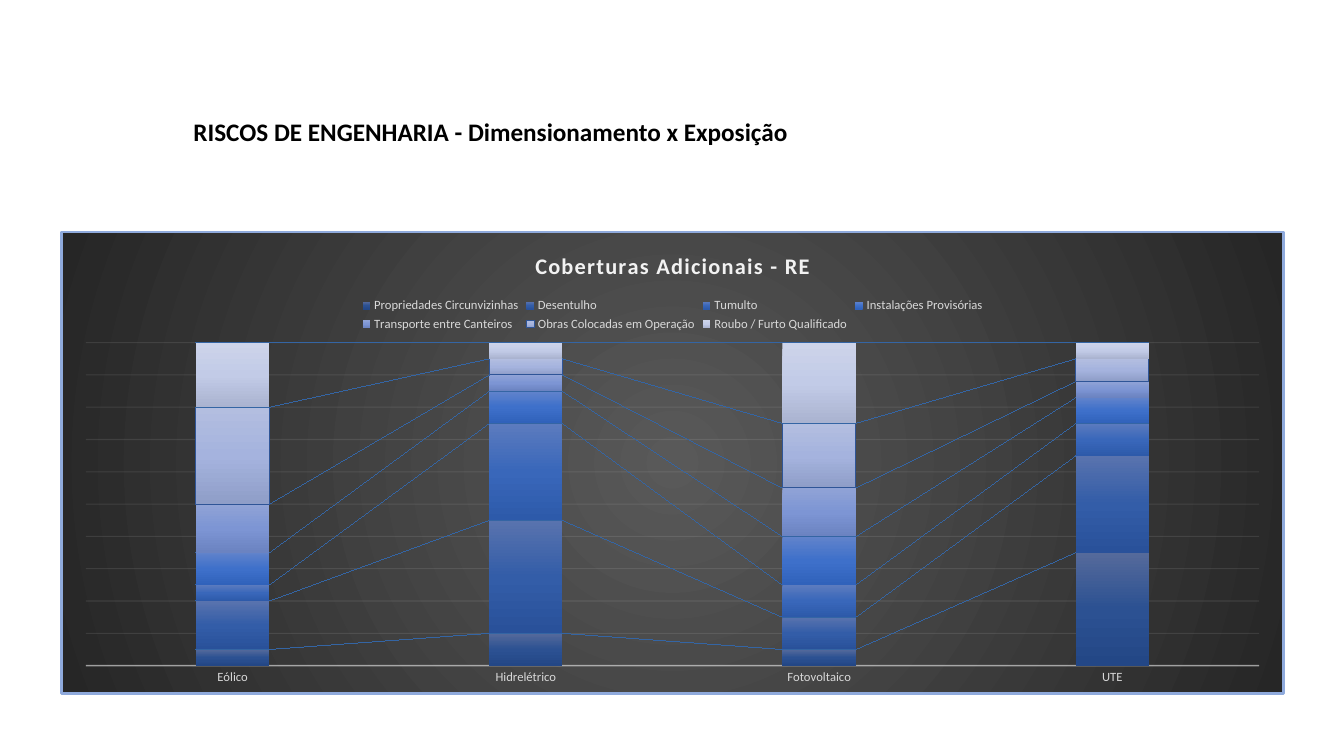
import pptx
import pptx.chart.data
import pptx.dml.color
import pptx.enum.chart
import pptx.oxml
import pptx.oxml.ns
import pptx.util
from dataclasses import dataclass
from pptx.util import Inches

NS = pptx.oxml.ns.nsdecls("a", "c")
qn = pptx.oxml.ns.qn


@dataclass(frozen=True)
class Theme:
    font: str = "Calibri"
    heading: str = "000000"
    chart_title: str = "F2F2F2"
    label: str = "D9D9D9"
    rule: str = "F2F2F2"
    border: str = "8FAADC"
    outline: str = "2F5597"
    link: str = "2E68B0"
    backdrop: tuple = ("595959", "262626")
    heading_size: float = 18
    title_size: float = 16
    label_size: float = 9


CATEGORIES = ["Eólico", "Hidrelétrico", "Fotovoltaico", "UTE"]
# name, values, gradient from top to bottom
COVERAGES = [
    ("Propriedades Circunvizinhas", (5, 10, 5, 35), ("556A9B", "2C5192", "234786")),
    ("Desentulho", (15, 35, 10, 30), ("5973AE", "335DA8", "29519A")),
    ("Tumulto", (5, 30, 10, 10), ("5C7BBE", "3967BA", "2D5AAA")),
    ("Instalações Provisórias", (10, 10, 15, 8), ("6183CB", "3E70CA", "3062BB")),
    ("Transporte entre Canteiros", (15, 5, 15, 5), ("90A3D6", "7D95D4", "6B83C1")),
    ("Obras Colocadas em Operação", (30, 5, 20, 7), ("B3BEE0", "A5B3DE", "8F9EC8")),
    ("Roubo / Furto Qualificado", (20, 5, 25, 5), ("CDD4EA", "C2CBE7", "AAB3D0")),
]
OUTLINED = "Obras Colocadas em Operação"


def gradient_xml(colors, direction):
    last = len(colors) - 1
    stops = "".join(
        f'<a:gs pos="{100000 * i // last}"><a:srgbClr val="{color}"/></a:gs>'
        for i, color in enumerate(colors))
    return f'<a:gradFill {NS} rotWithShape="1"><a:gsLst>{stops}</a:gsLst>{direction}</a:gradFill>'


def line_xml(color, width):
    return (f'<a:ln {NS} w="{pptx.util.Pt(width)}"><a:solidFill>'
            f'<a:srgbClr val="{color}"/></a:solidFill></a:ln>')


class SlideBuilder:
    def __init__(self, slide, theme):
        self.slide = slide
        self.theme = theme

    def style_font(self, font, size, color, bold=False):
        font.name = self.theme.font
        font.size = pptx.util.Pt(size)
        font.bold = bold
        font.color.rgb = pptx.dml.color.RGBColor.from_string(color)

    def style_line(self, line, color, width, opacity=100):
        line.width = pptx.util.Pt(width)
        line.color.rgb = pptx.dml.color.RGBColor.from_string(color)
        if opacity < 100:
            for rgb in line._ln.iter(qn("a:srgbClr")):
                rgb.append(pptx.oxml.parse_xml(f'<a:alpha {NS} val="{opacity * 1000}"/>'))

    def heading(self, text, left, top, width, height):
        frame = self.slide.shapes.add_textbox(left, top, width, height).text_frame
        frame.word_wrap = True
        paragraph = frame.paragraphs[0]
        paragraph.space_after = pptx.util.Pt(6)
        run = paragraph.add_run()
        run.text = text
        self.style_font(run.font, self.theme.heading_size, self.theme.heading, True)

    def coverage_chart(self, title, left, top, width, height):
        data = pptx.chart.data.CategoryChartData()
        data.categories = CATEGORIES
        for name, values, _ in COVERAGES:
            data.add_series(name, values)
        chart = self.slide.shapes.add_chart(
            pptx.enum.chart.XL_CHART_TYPE.COLUMN_STACKED_100,
            left, top, width, height, data).chart
        self.style_font(chart.font, 10, self.theme.heading)
        self.chart_title(chart, title)
        self.chart_legend(chart)
        self.chart_axes(chart)
        self.chart_columns(chart.plots[0])
        self.chart_backdrop(chart)
        self.plot_layout(chart)

    def chart_title(self, chart, text):
        chart.has_title = True
        run = chart.chart_title.text_frame.paragraphs[0].add_run()
        run.text = text
        self.style_font(run.font, self.theme.title_size, self.theme.chart_title, True)
        run.font._element.set("spc", "100")
        chart.chart_title.include_in_layout = False

    def chart_legend(self, chart):
        chart.has_legend = True
        chart.legend.position = pptx.enum.chart.XL_LEGEND_POSITION.TOP
        chart.legend.include_in_layout = False
        self.style_font(chart.legend.font, self.theme.label_size, self.theme.label)

    def chart_axes(self, chart):
        no_mark = pptx.enum.chart.XL_TICK_MARK.NONE
        types = chart.category_axis
        types.major_tick_mark = types.minor_tick_mark = no_mark
        self.style_font(types.tick_labels.font, self.theme.label_size, self.theme.label)
        self.style_line(types.format.line, self.theme.rule, 1, 54)
        share = chart.value_axis
        share.visible = False
        share.minimum_scale, share.maximum_scale, share.major_unit = 0, 1, 0.1
        share.has_major_gridlines = True
        self.style_line(share.major_gridlines.format.line, self.theme.rule, 0.75, 10)

    def chart_columns(self, plot):
        plot.gap_width = 300
        plot.overlap = 100
        plot.vary_by_categories = False
        for series, (name, _, colors) in zip(plot.series, COVERAGES):
            series.invert_if_negative = False
            if name == OUTLINED:
                self.style_line(series.format.line, self.theme.outline, 0.75)
            fill = gradient_xml(colors, '<a:lin ang="5400000" scaled="0"/>')
            series._element.get_or_add_spPr().insert(0, pptx.oxml.parse_xml(fill))
        links = f'<c:serLines {NS}><c:spPr>{line_xml(self.theme.link, 0.75)}</c:spPr></c:serLines>'
        plot._element.find(qn("c:overlap")).addnext(pptx.oxml.parse_xml(links))

    def chart_backdrop(self, chart):
        center = ('<a:path path="circle"><a:fillToRect l="50000" t="50000" '
                  'r="50000" b="50000"/></a:path>')
        fill = gradient_xml(self.theme.backdrop, center)
        border = line_xml(self.theme.border, 1.5)
        chart._chartSpace.find(qn("c:chart")).addnext(
            pptx.oxml.parse_xml(f"<c:spPr {NS}>{fill}{border}</c:spPr>"))

    def plot_layout(self, chart):
        """Fix the inner plot area, as fractions of the chart."""
        area = chart._chartSpace.find(qn("c:chart")).find(qn("c:plotArea"))
        for layout in area.findall(qn("c:layout")):
            area.remove(layout)
        sizes = "".join(f'<c:{key} val="{value}"/>' for key, value in
                        (("x", 0.02), ("y", 0.24), ("w", 0.96), ("h", 0.7)))
        area.insert(0, pptx.oxml.parse_xml(
            f'<c:layout {NS}><c:manualLayout><c:layoutTarget val="inner"/>'
            f'<c:xMode val="edge"/><c:yMode val="edge"/>{sizes}</c:manualLayout></c:layout>'))


def main():
    deck = pptx.Presentation()
    deck.slide_width, deck.slide_height = Inches(13.33), Inches(7.5)
    builder = SlideBuilder(deck.slides.add_slide(deck.slide_layouts[6]), Theme())
    builder.heading("RISCOS DE ENGENHARIA - Dimensionamento x Exposição",
                    Inches(1.82), Inches(1.1), Inches(6.55), Inches(0.4))
    builder.coverage_chart("Coberturas Adicionais - RE",
                           Inches(0.6), Inches(2.29), Inches(12.14), Inches(4.6))
    deck.save("out.pptx")


if __name__ == "__main__":
    main()
